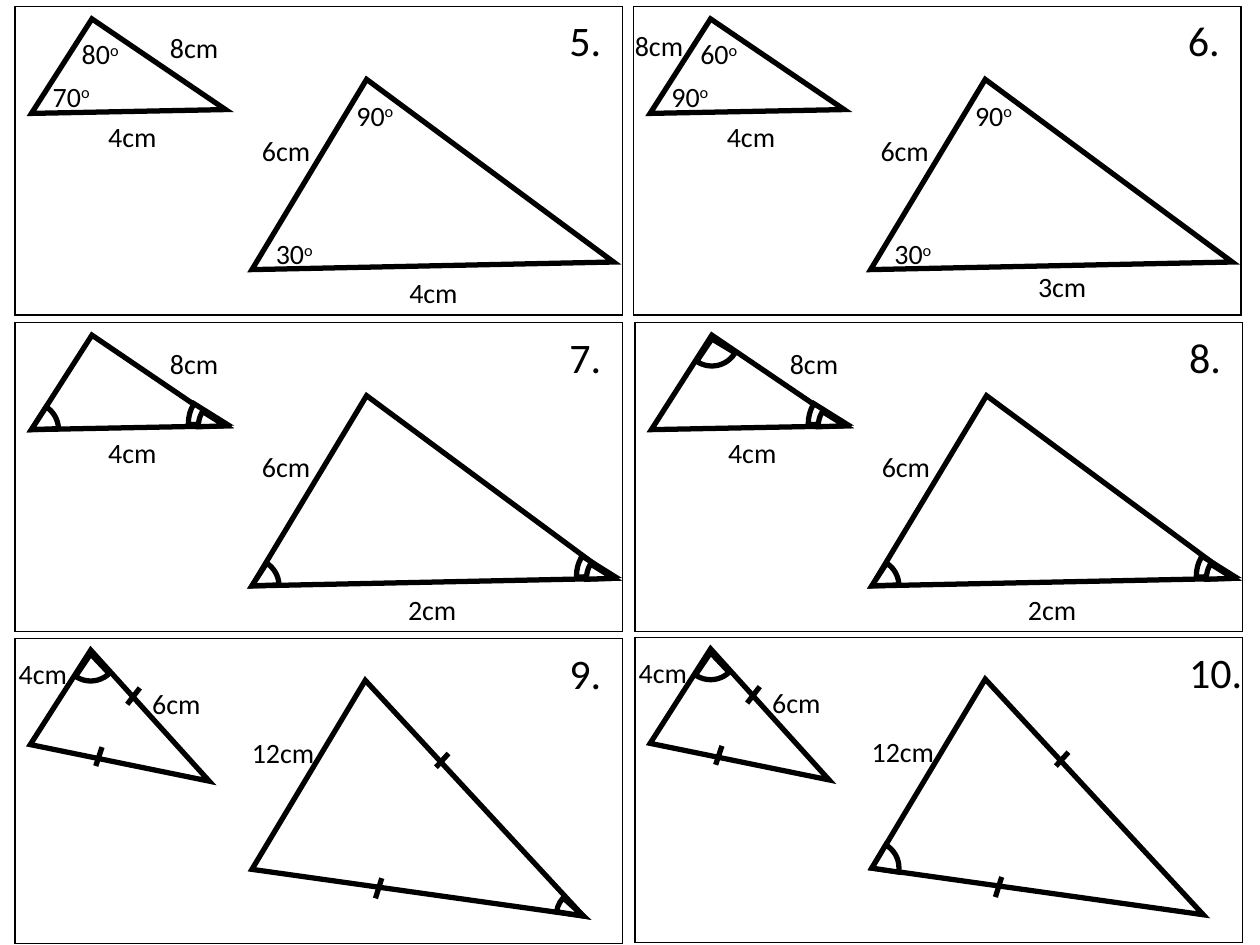
import dataclasses
import typing

import lxml.etree
import pptx
import pptx.dml.color
import pptx.enum.shapes
import pptx.enum.text
import pptx.oxml.ns
import pptx.shapes.group
import pptx.util

Inches = pptx.util.Inches
Shape = pptx.enum.shapes.MSO_SHAPE
Point = tuple[float, float]
Group = pptx.shapes.group.GroupShape

COLORS = {"ink": "000000", "paper": "FFFFFF"}
FONT = "Calibri"


@dataclasses.dataclass(frozen=True)
class Label:
    text: str
    left: float
    top: float
    width: float = 0.59
    size: int = 16
    raised: str = ""


@dataclasses.dataclass(frozen=True)
class Arc:
    corner: Point
    start: float
    end: float
    size: float = 0.43
    drop: float = 0


@dataclasses.dataclass(frozen=True)
class Panel:
    left: float
    top: float
    height: float
    angles: list[list[Point]]
    labels: list[Label]
    arcs: list[Arc] = dataclasses.field(default_factory=list)
    ticks: list[tuple[Point, Point]] = dataclasses.field(default_factory=list)


def color(name: str) -> pptx.dml.color.RGBColor:
    return pptx.dml.color.RGBColor.from_string(COLORS[name])


def outline(shape: typing.Any, weight: float) -> None:
    shape.line.color.rgb = color("ink")
    shape.line.width = pptx.util.Pt(weight)
    line = shape.line._get_or_add_ln()
    lxml.etree.SubElement(line, pptx.oxml.ns.qn("a:miter"), lim="800000")


def paint(shape: typing.Any, weight: float) -> None:
    shape.shadow.inherit = False
    shape.fill.solid()
    shape.fill.fore_color.rgb = color("paper")
    outline(shape, weight)


def draw_angle(group: Group, base: Point, corners: list[Point]) -> None:
    points = [(Inches(base[0] + x), Inches(base[1] + y)) for x, y in corners]
    form = group.shapes.build_freeform(*points[0])
    form.add_line_segments(points[1:], close=True)
    paint(form.convert_to_shape(), 3)


def draw_label(group: Group, base: Point, label: Label) -> None:
    box = group.shapes.add_textbox(
        Inches(base[0] + label.left), Inches(base[1] + label.top),
        Inches(label.width), Inches(0.5 if label.size > 16 else 0.37))
    frame = box.text_frame
    frame.word_wrap = False
    frame.auto_size = pptx.enum.text.MSO_AUTO_SIZE.SHAPE_TO_FIT_TEXT
    for text, lift in ((label.text, "0"), (label.raised, "30000")):
        if text:
            run = frame.paragraphs[0].add_run()
            run.text = text
            run.font.name = FONT
            run.font.size = pptx.util.Pt(label.size)
            run.font.color.rgb = color("ink")
            run.font._element.set("baseline", lift)


def draw_arc(group: Group, base: Point, arc: Arc) -> None:
    left = base[0] + arc.corner[0] - arc.size / 2
    top = base[1] + arc.corner[1] + arc.drop - arc.size / 2
    pie = group.shapes.add_shape(
        Shape.PIE, Inches(left), Inches(top), Inches(arc.size), Inches(arc.size))
    pie.adjustments[0] = arc.start * 0.6
    pie.adjustments[1] = arc.end * 0.6
    paint(pie, 3)


def draw_tick(group: Group, base: Point, start: Point, end: Point) -> None:
    tick = group.shapes.add_connector(
        pptx.enum.shapes.MSO_CONNECTOR.STRAIGHT,
        Inches(base[0] + start[0]), Inches(base[1] + start[1]),
        Inches(base[0] + end[0]), Inches(base[1] + end[1]))
    outline(tick, 3)
    lxml.etree.SubElement(tick._element.spPr, pptx.oxml.ns.qn("a:effectLst"))


def draw_panel(slide: typing.Any, panel: Panel) -> None:
    group = slide.shapes.add_group_shape()
    base = (panel.left, panel.top)
    frame = group.shapes.add_shape(
        Shape.RECTANGLE, Inches(panel.left), Inches(panel.top),
        Inches(4.82), Inches(panel.height))
    paint(frame, 0.75)
    for corners in panel.angles:
        draw_angle(group, base, corners)
    for label in panel.labels:
        draw_label(group, base, label)
    for arc in panel.arcs:
        draw_arc(group, base, arc)
    for start, end in panel.ticks:
        draw_tick(group, base, start, end)


def number(text: str, width: float = 0.46) -> Label:
    return Label(text, 4.3, 0.02, width, 24)


def degrees(text: str, left: float, top: float) -> Label:
    return Label(text, left, top, 0.51, raised="o")


def twin(corner: Point) -> list[Arc]:
    return [Arc(corner, 178, 212, 0.59, -0.02), Arc(corner, 178, 212)]


LARGE = [(2.79, 0.58), (1.88, 2.09), (4.75, 2.03)]
SMALL = [(0.61, 0.1), (0.13, 0.85), (1.67, 0.82)]
LONG = [(2.78, 0.33), (1.88, 1.83), (4.51, 2.2)]
SHORT = [(0.6, 0.09), (0.12, 0.84), (1.54, 1.13)]

SIDES = [Label("6cm", 1.86, 0.96), Label("4cm", 0.64, 0.85)]
RIGHT = [degrees("90", 2.61, 0.68), degrees("30", 1.97, 1.78)]
EIGHT = Label("8cm", 1.13, 0.14)
TWO = Label("2cm", 3.02, 2.09)
EQUAL = [Label("12cm", 1.78, 0.72, 0.7), Label("6cm", 0.99, 0.33),
         Label("4cm", -0.07, 0.09)]
TWINS = [Arc(LARGE[1], 303, 358), *twin(LARGE[2]), *twin(SMALL[2])]
PEAK = Arc(SHORT[0], 46.7, 124, drop=0.03)
TICKS = [((0.89, 0.52), (0.99, 0.39)), ((0.69, 0.86), (0.64, 1.01)),
         ((3.34, 1.02), (3.44, 0.91)), ((2.91, 1.9), (2.86, 2.06))]

PANELS = [
    Panel(0.12, 0.05, 2.45, [LARGE, SMALL],
          [number("5."), *SIDES, *RIGHT, EIGHT, Label("4cm", 3.03, 2.09),
           degrees("80", 0.43, 0.19), degrees("70", 0.2, 0.53)]),
    Panel(5.03, 0.05, 2.45, [LARGE, SMALL],
          [number("6."), *SIDES, *RIGHT, Label("8cm", -0.09, 0.13),
           Label("3cm", 3.11, 2.04),
           degrees("60", 0.43, 0.19), degrees("90", 0.2, 0.53)]),
    Panel(0.12, 2.56, 2.45, [LARGE, SMALL],
          [number("7."), *SIDES, EIGHT, TWO],
          [*TWINS, Arc(SMALL[1], 303, 358)]),
    Panel(5.04, 2.56, 2.45, [LARGE, SMALL],
          [number("8."), *SIDES, EIGHT, TWO],
          [*TWINS, Arc(SMALL[0], 31, 124, drop=0.03)]),
    Panel(0.12, 5.07, 2.42, [LONG, SHORT], [number("9."), *EQUAL],
          [PEAK, Arc(LONG[2], 189, 222)], TICKS),
    Panel(5.04, 5.06, 2.42, [LONG, SHORT], [number("10.", 0.63), *EQUAL],
          [PEAK, Arc(LONG[1], 301, 8.6)], TICKS),
]


def main() -> None:
    deck = pptx.Presentation()
    deck.slide_width = Inches(10)
    deck.slide_height = Inches(7.5)
    slide = deck.slides.add_slide(deck.slide_layouts[6])
    for panel in PANELS:
        draw_panel(slide, panel)
    deck.save("out.pptx")


if __name__ == "__main__":
    main()
